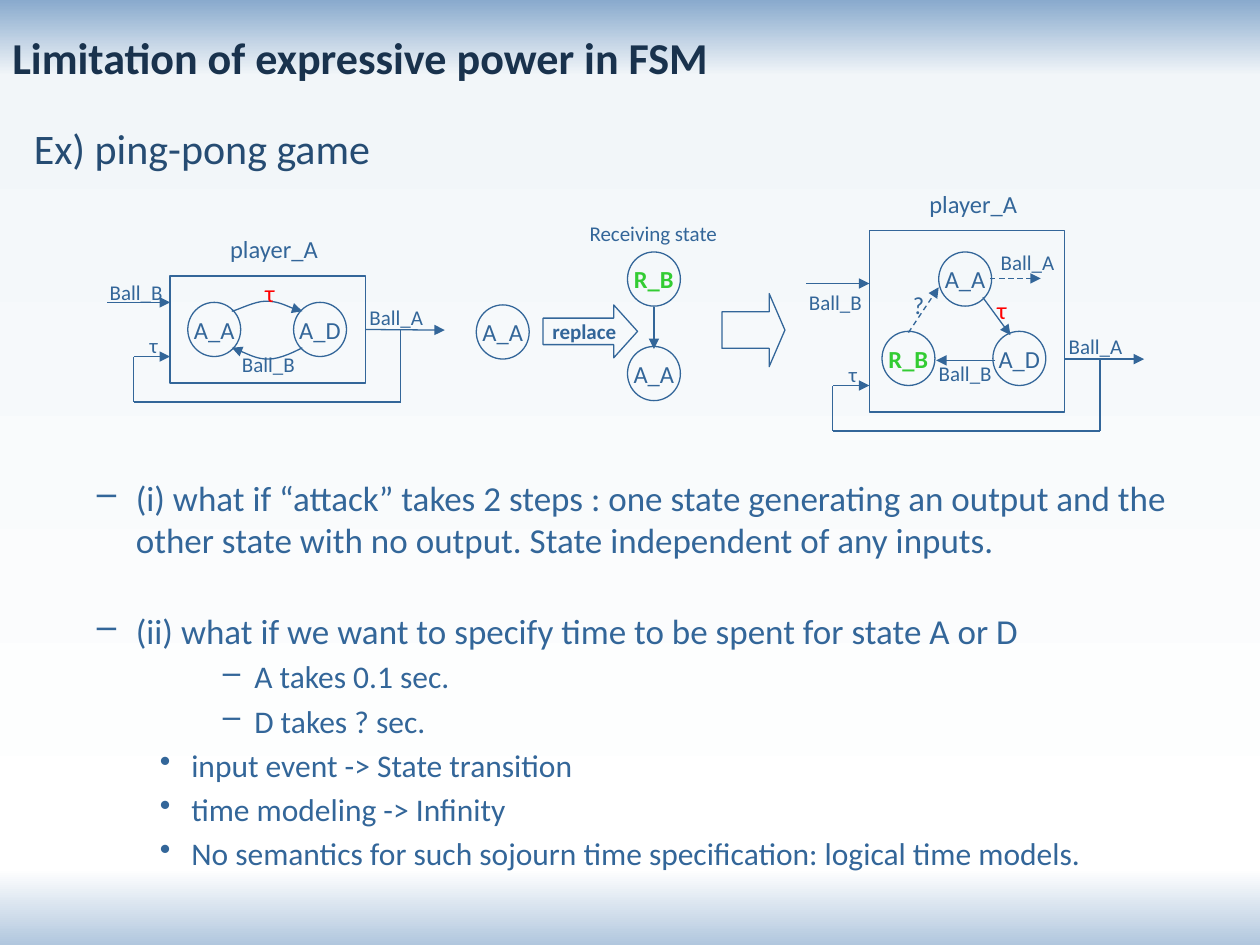
from lxml.etree import SubElement as Sub
from pptx import Presentation
from pptx.dml.color import RGBColor
from pptx.enum.dml import MSO_LINE as Dash
from pptx.enum.shapes import MSO_CONNECTOR as Conn, MSO_SHAPE as Shape
from pptx.enum.text import MSO_ANCHOR as Anchor, PP_ALIGN as Align
from pptx.oxml.ns import qn
from pptx.util import Inches, Pt

BLUE = RGBColor(0x33, 0x66, 0x99)
NAVY = RGBColor(0x19, 0x32, 0x4D)
HEAD = RGBColor(0x26, 0x4C, 0x73)
GREEN = RGBColor(0x33, 0xCC, 0x33)
RED = RGBColor(0xFF, 0x00, 0x00)
STOPS = [(0, "89AACD"), (8, "F2F6F9"), (92, "FFFFFF"), (100, "B1C7DE")]


def box(x, y, w, h):
    return Inches(x), Inches(y), Inches(w), Inches(h)


# Basic parts
def style(para, size, color=BLUE, bold=False):
    for run in para.runs:
        font = run.font
        font.name, font.size, font.bold = "Calibri", Pt(size), bold
        font.color.rgb = color


def write(part, text, size, color=BLUE, bold=False):
    frame = part.text_frame
    frame.text = text
    frame.word_wrap = False
    frame.vertical_anchor = Anchor.MIDDLE
    para = frame.paragraphs[0]
    para.alignment = Align.CENTER
    style(para, size, color, bold)


def label(sl, text, x, y, w, h=0.3, size=12, color=BLUE):
    write(sl.shapes.add_textbox(*box(x, y, w, h)), text, size, color)


def outline(part):
    part.shadow.inherit = False
    part.fill.background()
    part.line.color.rgb = BLUE
    part.line.width = Pt(0.75)
    return part


def add(sl, kind, x, y, w, h):
    return outline(sl.shapes.add_shape(kind, *box(x, y, w, h)))


def tip(part):
    Sub(part.line._get_or_add_ln(), qn("a:tailEnd"), type="triangle")


def line(sl, x1, y1, x2, y2, arrow=True, dash=False):
    link = sl.shapes.add_connector(Conn.STRAIGHT, *box(x1, y1, x2, y2))
    link.line.color.rgb = BLUE
    link.line.width = Pt(0.75)
    if dash:
        link.line.dash_style = Dash.DASH
    if arrow:
        tip(link)
    Sub(link._element.spPr, qn("a:effectLst"))
    return link


def curve(sl, x, y, points):
    (sx, sy), *rest = [(Inches(x + px), Inches(y + py)) for px, py in points]
    form = sl.shapes.build_freeform(sx, sy)
    form.add_line_segments(rest, close=False)
    arc = outline(form.convert_to_shape())
    tip(arc)
    # Turn each three straight steps into one Bezier curve
    track = next(arc._element.iter(qn("a:path")))
    steps = track.findall(qn("a:lnTo"))
    for i in range(0, len(steps), 3):
        bend = Sub(track, qn("a:cubicBezTo"))
        for step in steps[i:i + 3]:
            bend.append(step[0])
            track.remove(step)


def state(sl, text, x, y):
    ball = add(sl, Shape.OVAL, x, y, 0.42, 0.43)
    new = text == "R_B"
    write(ball, text, 14, GREEN if new else BLUE, new)


# Player frame with its input, output and feedback loop
def player(sl, x, y, w, h, feed, note):
    label(sl, "player_A", x + 0.36, y - 0.38, 0.93, 0.33, 14)
    rect = add(sl, Shape.RECTANGLE, x, y, w, h)
    right, base = x + w, y + h
    out, back, low = base - 0.42, base - 0.21, base + 0.15
    near, far = x - 0.29, right + 0.28
    line(sl, x - 0.5, y + feed, x, y + feed)
    line(sl, near, back, x, back)
    exit = line(sl, right, out, right + 0.63, out)
    for ends in ((far, out, far, low), (far, low, near, low),
                 (near, low, near, back)):
        line(sl, *ends, arrow=False)
    label(sl, "Ball_A", right - 0.07, base - 0.67, 0.63)
    label(sl, "Ball_B", x - 0.58, y + note, 0.62)
    label(sl, " τ", x - 0.31, base - 0.45, 0.32)
    return rect, exit


def before(sl, x, y, w, h):
    rect, exit = player(sl, x, y, w, h, 0.21, -0.02)
    exit.begin_connect(rect, 3)
    state(sl, "A_A", x + 0.14, y + 0.21)
    state(sl, "A_D", x + 0.98, y + 0.21)
    curve(sl, x, y, [(0.49, 0.28), (0.54, 0.27), (0.67, 0.2), (0.76, 0.2),
                     (0.86, 0.2), (0.99, 0.27), (1.05, 0.28)])
    curve(sl, x, y, [(1.05, 0.57), (1.01, 0.59), (0.88, 0.66), (0.78, 0.66),
                     (0.69, 0.66), (0.55, 0.59), (0.49, 0.57)])
    label(sl, "Ball_B", x + 0.47, y + 0.55, 0.62)
    label(sl, " τ", x + 0.6, y - 0.04, 0.34, 0.34, 14, RED)


# Replacement rule between the two players
def rule(sl, x, y):
    state(sl, "A_A", x, y + 0.72)
    state(sl, "R_B", x + 1.2, y + 0.3)
    state(sl, "A_A", x + 1.2, y + 1.05)
    line(sl, x + 1.41, y + 0.74, x + 1.41, y + 1.07)
    label(sl, "Receiving state", x + 0.79, y, 1.23)
    swap = add(sl, Shape.RIGHT_ARROW, x + 0.53, y + 0.72, 0.75, 0.42)
    swap.adjustments[1] = 0.45
    write(swap, "replace", 12, bold=True)
    big = add(sl, Shape.RIGHT_ARROW, x + 1.95, y + 0.63, 0.5, 0.58)
    big.adjustments[1] = 0.25


def after(sl, x, y, w, h):
    player(sl, x, y, w, h, 0.42, 0.42)
    state(sl, "A_A", x + 0.55, y + 0.17)
    state(sl, "A_D", x + 0.98, y + 0.8)
    state(sl, "R_B", x + 0.1, y + 0.8)
    line(sl, x + 0.9, y + 0.53, x + 1.12, y + 0.83)
    line(sl, x + 0.96, y + 0.38, x + 1.36, y + 0.38, dash=True)
    line(sl, x + 1.0, y + 1.03, x + 0.53, y + 1.03)
    line(sl, x + 0.31, y + 0.81, x + 0.55, y + 0.45, dash=True)
    label(sl, "Ball_A", x + 0.94, y + 0.1, 0.63)
    label(sl, "Ball_B", x + 0.45, y + 0.98, 0.62)
    label(sl, " τ", x + 0.86, y + 0.46, 0.34, 0.34, 14, RED)
    label(sl, "?", x + 0.24, y + 0.42, 0.3, 0.34, 14)


# Title and heading
def heading(sl, text, area, size, color, bold=False, top=0.05):
    part = sl.shapes.add_textbox(*box(*area))
    write(part, text, size, color, bold)
    frame = part.text_frame
    frame.word_wrap = True
    frame.margin_top = Inches(top)
    frame.paragraphs[0].alignment = Align.LEFT


# Bullet list: text, sign, indent, hang, size, space before
def notes(sl, x, y, w, h):
    items = [
        ("(i) what if “attack” takes 2 steps : one state generating an output "
         "and the other state with no output. State independent of any inputs.",
         "–", 0.81, 0.31, 20, 0),
        ("(ii) what if we want to specify time to be spent for state A or D",
         "–", 0.81, 0.31, 20, 28),
        ("A takes 0.1 sec.", "–", 1.75, 0.25, 18, 3.6),
        ("D takes ? sec.", "–", 1.75, 0.25, 18, 3.6),
        ("input event -> State transition", "•", 1.25, 0.25, 18, 3.6),
        ("time modeling -> Infinity", "•", 1.25, 0.25, 18, 3.6),
        ("No semantics for such sojourn time specification: "
         "logical time models.", "•", 1.25, 0.25, 18, 3.6),
    ]
    frame = sl.shapes.add_textbox(*box(x, y, w, h)).text_frame
    frame.word_wrap = True
    for i, (text, sign, left, hang, size, gap) in enumerate(items):
        para = frame.add_paragraph() if i else frame.paragraphs[0]
        para.text = text
        props = para._p.get_or_add_pPr()
        props.set("marL", str(Inches(left)))
        props.set("indent", str(-Inches(hang)))
        Sub(props, qn("a:buChar"), char=sign)
        if gap:
            para.space_before = Pt(gap)
        style(para, size)


def backdrop(sl):
    fill = sl.background.fill
    fill.gradient()
    fill.gradient_angle = 270
    stops = fill._fill._gradFill.find(qn("a:gsLst"))
    for old in list(stops):
        stops.remove(old)
    for pos, color in STOPS:
        stop = Sub(stops, qn("a:gs"), pos=str(pos * 1000))
        Sub(stop, qn("a:srgbClr"), val=color)


def main():
    deck = Presentation()
    deck.slide_width, deck.slide_height = Inches(10), Inches(7.5)
    sl = deck.slides.add_slide(deck.slide_layouts[6])
    backdrop(sl)
    heading(sl, "Limitation of expressive power in FSM", (0, 0, 6, 0.75),
            25.2, NAVY, True, 0.2)
    heading(sl, "Ex) ping-pong game", (0.17, 0.92, 9.67, 0.5), 24, HEAD)
    before(sl, 1.35, 2.19, 1.55, 0.85)
    rule(sl, 3.78, 1.7)
    after(sl, 6.9, 1.83, 1.55, 1.44)
    notes(sl, 0.17, 3.73, 9.67, 3.36)
    deck.save("out.pptx")


if __name__ == "__main__":
    main()
